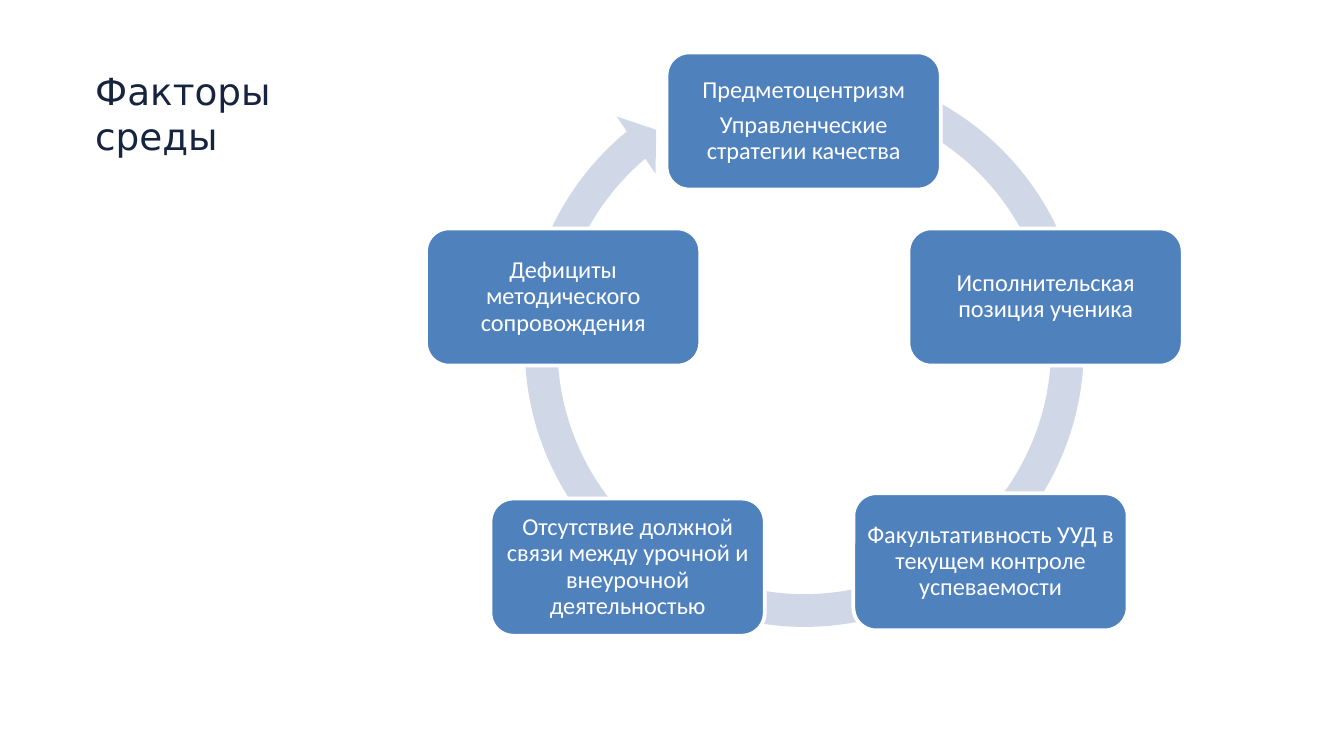
from pptx import Presentation
from pptx.dml.color import RGBColor as Rgb
from pptx.enum.shapes import MSO_SHAPE as Kind
from pptx.enum.text import MSO_ANCHOR as Anchor, PP_ALIGN as Align
from pptx.util import Inches, Pt

COLORS = {"ink": "172440", "ring": "D0D8E8", "card": "4F81BD", "white": "FFFFFF"}
CARD = (2.04, 1.02)
FACTORS = [
    (4.96, 0.39, ["Предметоцентризм", "Управленческие стратегии качества"]),
    (6.76, 1.7, ["Исполнительская позиция ученика"]),
    (6.35, 3.67, ["Факультативность УУД в текущем контроле успеваемости"]),
    (3.65, 3.71, ["Отсутствие должной связи между урочной и внеурочной деятельностью"]),
    (3.17, 1.7, ["Дефициты методического сопровождения"]),
]


class Deck:
    def __init__(self, wide):
        self.file = Presentation()
        self.file.slide_width = Inches(wide)
        self.file.slide_height = Inches(wide * 9 / 16)
        self.slide = self.file.slides.add_slide(self.file.slide_layouts[6])

    def color(self, name):
        return Rgb.from_string(COLORS[name])

    def style(self, para, face, size, color):
        para.font.name = face
        para.font.size = Pt(size)
        para.font.color.rgb = self.color(color)

    def shape(self, kind, box, fill):
        item = self.slide.shapes.add_shape(kind, *map(Inches, box))
        item.shadow.inherit = False
        item.fill.solid()
        item.fill.fore_color.rgb = self.color(fill)
        return item

    def title(self, text, box):
        frame = self.slide.shapes.add_textbox(*map(Inches, box)).text_frame
        frame.word_wrap = True
        frame.vertical_anchor = Anchor.TOP
        frame.text = text
        self.style(frame.paragraphs[0], "DejaVu Sans", 20, "ink")

    def ring(self, box, width, tip, end, start, head):
        item = self.shape(Kind.CIRCULAR_ARROW, box, "ring")
        item.line.fill.background()
        values = [width / 100, tip * 0.6, end * 0.6, start * 0.6, head / 100]
        for index, value in enumerate(values):
            item.adjustments[index] = value

    def card(self, left, top, lines):
        item = self.shape(Kind.ROUNDED_RECTANGLE, (left, top, *CARD), "card")
        item.line.color.rgb = self.color("white")
        item.line.width = Pt(2)
        frame = item.text_frame
        frame.word_wrap = True
        frame.vertical_anchor = Anchor.MIDDLE
        frame.margin_left = frame.margin_right = 0
        frame.margin_top = frame.margin_bottom = 0
        frame.text = "\n".join(lines)
        for para in frame.paragraphs:
            para.alignment = Align.CENTER
            para.line_spacing = 0.9
            self.style(para, "Calibri", 13, "white")
        for para in frame.paragraphs[:-1]:
            para.space_after = Pt(4.55)


def main():
    deck = Deck(10)
    deck.title("Факторы среды", (0.61, 0.46, 2.14, 0.8))
    deck.ring((3.77, 0.37, 4.43, 4.43), 5.5, 5.51, 230.25, 289.37, 5.8)
    for left, top, lines in FACTORS:
        deck.card(left, top, lines)
    deck.file.save("out.pptx")


if __name__ == "__main__":
    main()
